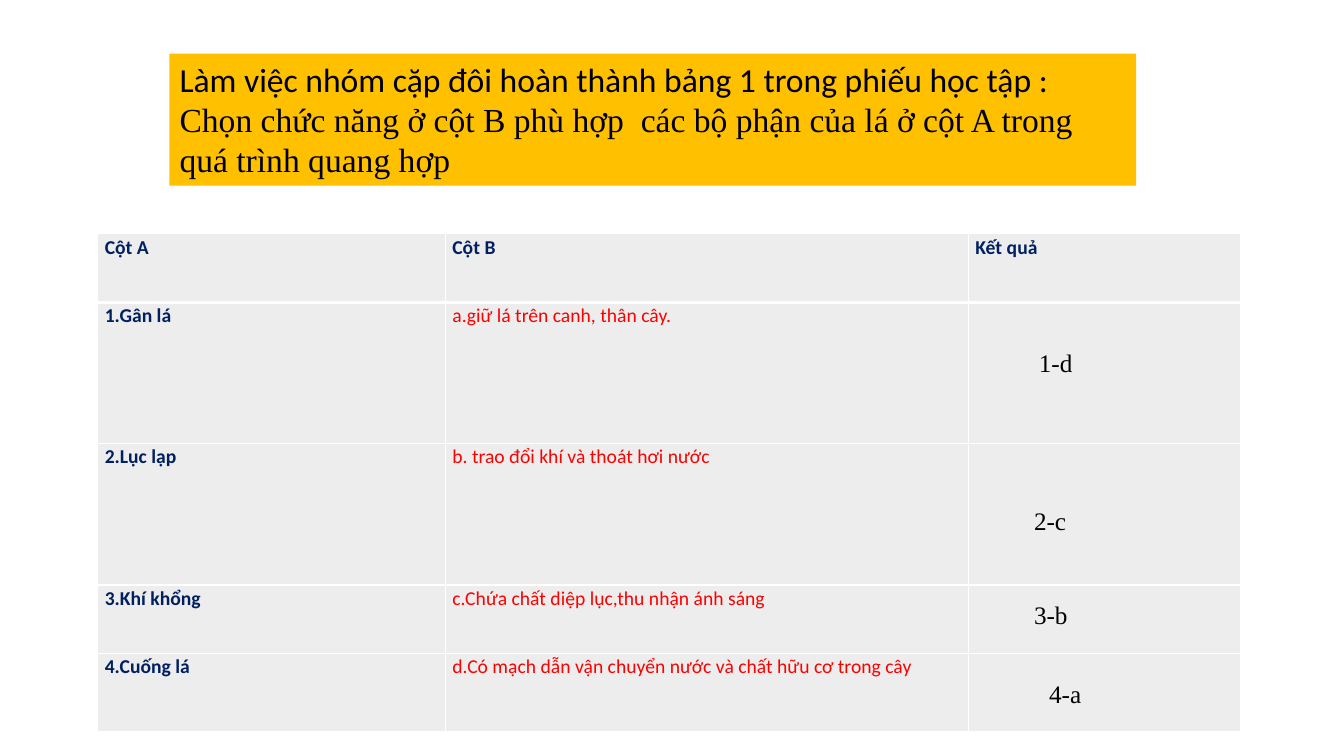
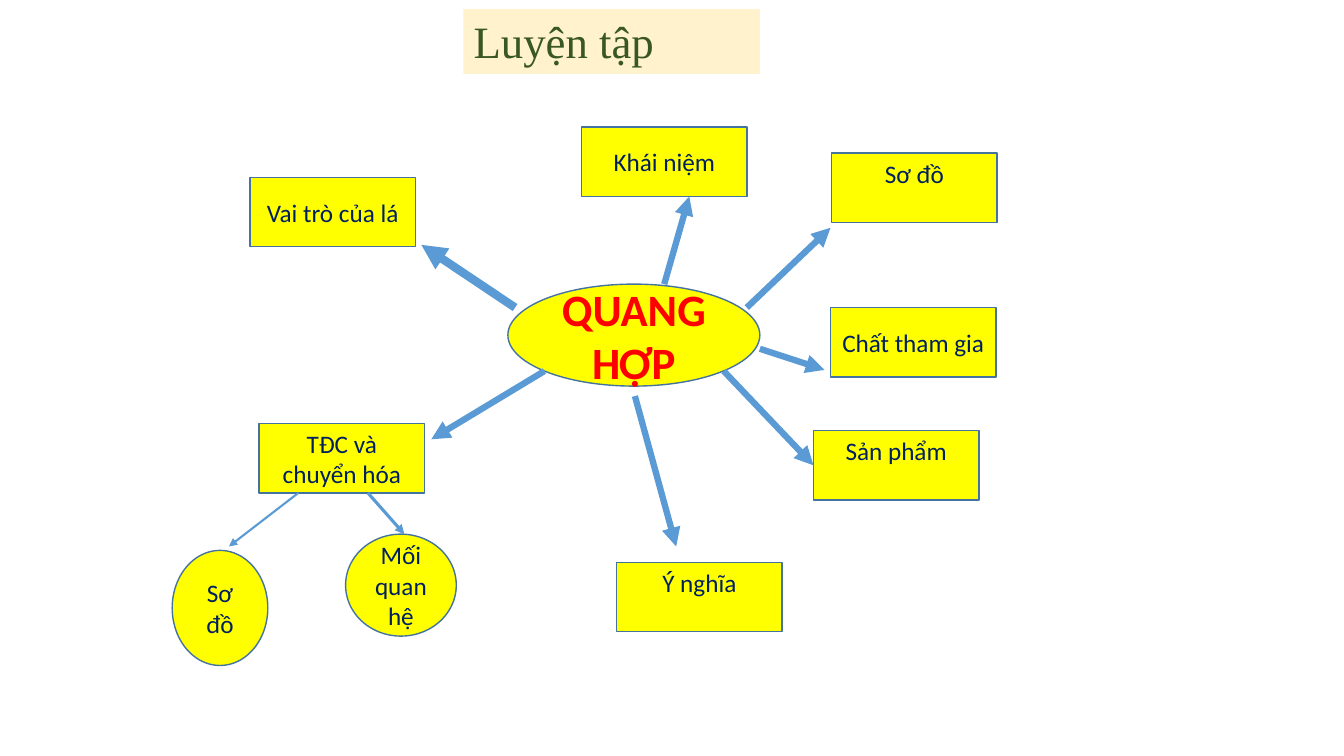
from lxml import etree
from pptx import Presentation
from pptx import util as u
from pptx.dml.color import RGBColor
from pptx.enum import shapes, text
from pptx.oxml import parse_xml
from pptx.oxml.ns import qn, nsdecls

INK = {
    "black": "000000", "navy": "002060", "red": "FF0000", "green": "385723",
    "white": "FFFFFF", "grey": "EDEDED", "gold": "FFC000", "cream": "FFF2CC",
    "yellow": "FFFF00", "edge": "43739E", "blue": "5B9BD5",
}
SANS, SERIF = "Calibri", "Times New Roman"
RECT, OVAL = shapes.MSO_SHAPE.RECTANGLE, shapes.MSO_SHAPE.OVAL
LEFT, MID = text.PP_ALIGN.LEFT, text.PP_ALIGN.CENTER
TOP, HALF = text.MSO_ANCHOR.TOP, text.MSO_ANCHOR.MIDDLE


def tint(name):
    return RGBColor.from_string(INK[name])


def cms(*nums):
    return [u.Cm(n) for n in nums]


def paint(item, name):
    item.fill.solid()
    item.fill.fore_color.rgb = tint(name)


def write(frame, words, size=18, font=SANS, ink="navy", bold=False,
          align=LEFT, gap=1.0):
    para = frame.paragraphs[-1]
    para.alignment = align
    para.line_spacing = gap
    run = para.add_run()
    run.text = words
    run.font.size = u.Pt(size)
    run.font.name = font
    run.font.bold = bold
    run.font.color.rgb = tint(ink)


def head(slide, spot, fill):
    title = slide.shapes.title
    title.left, title.top, title.width, title.height = cms(*spot)
    paint(title, fill)
    frame = title.text_frame
    frame.word_wrap = True
    frame.auto_size = text.MSO_AUTO_SIZE.NONE
    frame.vertical_anchor = TOP
    return frame


def note(slide, words, left, top):
    box = slide.shapes.add_textbox(*cms(left, top, 3.43, 1.02))
    box.text_frame.word_wrap = True
    write(box.text_frame, words, font=SERIF, ink="black")


def node(slide, words, spot, form=RECT, anchor=HALF, **style):
    shape = slide.shapes.add_shape(form, *cms(*spot))
    shape.shadow.inherit = False
    paint(shape, "yellow")
    shape.line.color.rgb = tint("edge")
    shape.line.width = u.Pt(1)
    frame = shape.text_frame
    frame.word_wrap = True
    frame.vertical_anchor = anchor
    write(frame, words, align=MID, **style)
    return shape


def arrow(slide, ends, width=4.5, goal=None):
    line = slide.shapes.add_connector(
        shapes.MSO_CONNECTOR.STRAIGHT, *cms(*ends))
    if goal is not None:
        line.end_connect(goal, 1)
    line.line.color.rgb = tint("blue")
    line.line.width = u.Pt(width)
    etree.SubElement(line.line._get_or_add_ln(), qn("a:tailEnd"),
                     type="triangle")
    etree.SubElement(line._element.spPr, qn("a:effectLst"))


def edge(cell, row):
    props = cell._tc.get_or_add_tcPr()
    wide = {(0, "B"), (1, "T")}
    for spot, side in enumerate("LRTB"):
        width = u.Pt(3 if (row, side) in wide else 1)
        props.insert(spot, parse_xml(
            f'<a:ln{side} {nsdecls("a")} w="{width}"><a:solidFill>'
            f'<a:srgbClr val="{INK["white"]}"/></a:solidFill></a:ln{side}>'))


def grid(slide, spot, cols, rows, data):
    table = slide.shapes.add_table(
        len(rows), len(cols), *cms(*spot, sum(cols), sum(rows))).table
    table.horz_banding = False
    for col, width in zip(table.columns, cols):
        col.width = u.Cm(width)
    for r, (row, tall) in enumerate(zip(table.rows, rows)):
        row.height = u.Cm(tall)
        for c, cell in enumerate(row.cells):
            paint(cell, "grey")
            edge(cell, r)
            cell.margin_left = cell.margin_right = u.Cm(0.18)
            cell.margin_top = cell.margin_bottom = 0
            if c < len(data[r]):
                plain = r > 0 and c == 1
                write(cell.text_frame, data[r][c], size=14, bold=not plain,
                      ink="red" if plain else "navy",
                      align=text.PP_ALIGN.JUSTIFY, gap=1.07)


def match(slide):
    frame = head(slide, (4.27, 1.35, 24.36, 3.33), "gold")
    write(frame, "Làm việc nhóm cặp đôi hoàn thành bảng 1 trong phiếu học tập :",
          size=24, ink="black")
    write(frame, " Chọn chức năng ở cột B phù hợp  các bộ phận của lá ở cột A "
          "trong quá trình quang hợp", size=24, font=SERIF, ink="black")
    grid(slide, (2.46, 5.89), (8.76, 13.18, 6.86),
         (1.73, 3.56, 3.56, 1.73, 1.96), [
        ("Cột A", "Cột B", "Kết quả"),
        ("1.Gân lá", "a.giữ lá trên canh, thân cây."),
        ("2.Lục lạp", "b. trao đổi khí và thoát hơi nước"),
        ("3.Khí khổng", "c.Chứa chất diệp lục,thu nhận ánh sáng"),
        ("4.Cuống lá",
         "d.Có mạch dẫn vận chuyển nước và chất hữu cơ trong cây"),
    ])
    for key in (("1-d", 25.93, 8.64), ("2-c", 25.81, 12.62),
                ("3-b", 25.81, 14.99), ("4-a", 26.19, 16.97)):
        note(slide, *key)


def mind(slide):
    write(head(slide, (11.68, 0.23, 7.47, 1.63), "cream"), "Luyện tập",
          size=32, font=SERIF, ink="green")
    node(slide, "QUANG HỢP", (12.8, 7.16, 6.35, 2.57), OVAL,
         size=32, ink="red", bold=True)
    boxes = {}
    for words, left, top, anchor in (
            ("Ý nghĩa", 15.54, 14.17, TOP),
            ("Khái niệm", 14.66, 3.2, HALF),
            ("Sơ đồ", 20.96, 3.86, TOP),
            ("Chất tham gia", 20.93, 7.75, HALF),
            ("Sản phẩm", 20.5, 10.85, TOP),
            ("TĐC và chuyển hóa", 6.53, 10.67, HALF),
            ("Vai trò của lá", 6.3, 4.47, HALF)):
        boxes[words] = node(slide, words, (left, top, 4.17, 1.75),
                            anchor=anchor)
    node(slide, "Sơ đồ", (4.34, 13.87, 2.41, 2.9), OVAL)
    node(slide, "Mối quan hệ", (8.71, 13.46, 2.79, 2.57), OVAL)
    for ends in ((16.74, 7.16, 17.37, 4.95), (18.82, 7.75, 20.93, 5.74),
                 (19.15, 8.79, 20.78, 9.32), (16, 9.98, 17.04, 13.77),
                 (13.72, 9.35, 10.87, 11.07)):
        arrow(slide, ends)
    arrow(slide, (18.24, 9.35, 20.5, 11.73), goal=boxes["Sản phẩm"])
    arrow(slide, (12.98, 7.75, 10.62, 6.17), width=6)
    arrow(slide, (7.52, 12.42, 5.77, 13.77), width=1.5)
    arrow(slide, (9.27, 12.42, 10.19, 13.46), width=2.25)


def main():
    deck = Presentation()
    deck.slide_width, deck.slide_height = cms(33.87, 19.05)
    for build in (match, mind):
        build(deck.slides.add_slide(deck.slide_layouts[5]))
    deck.save("out.pptx")


if __name__ == "__main__":
    main()
